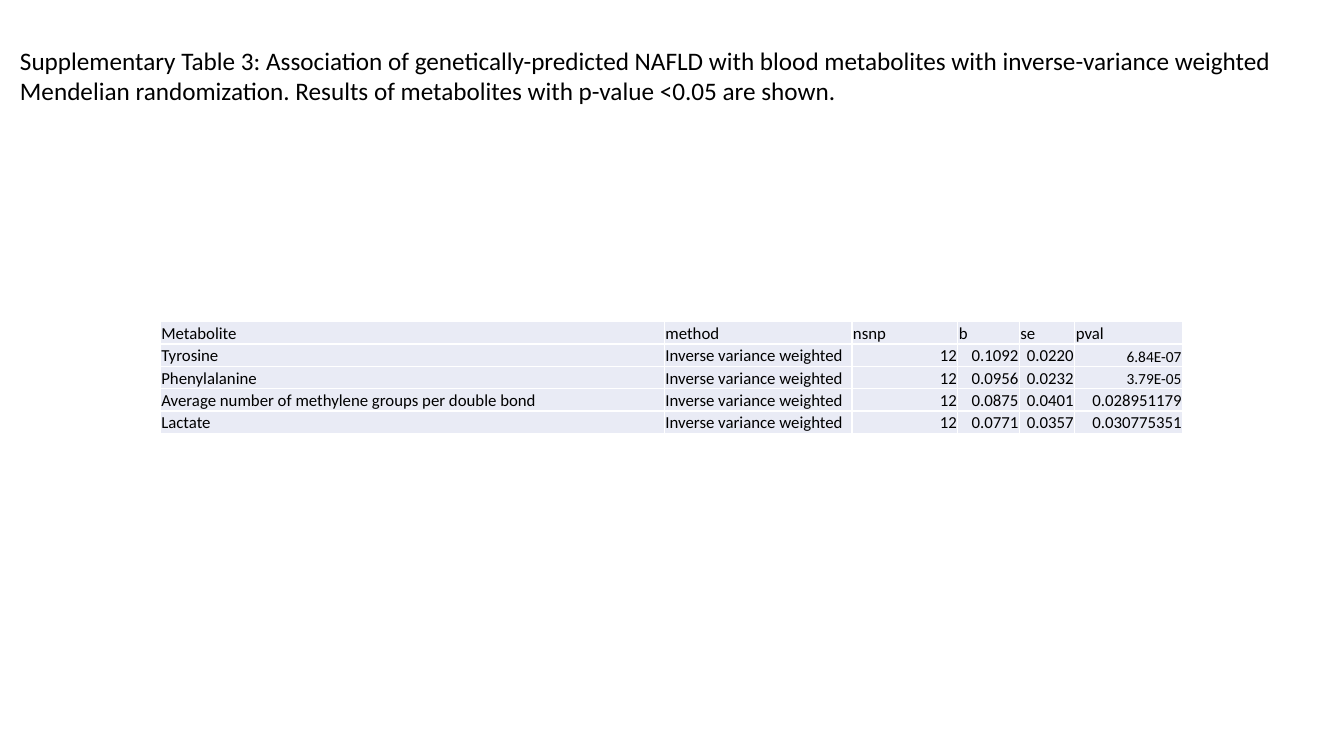
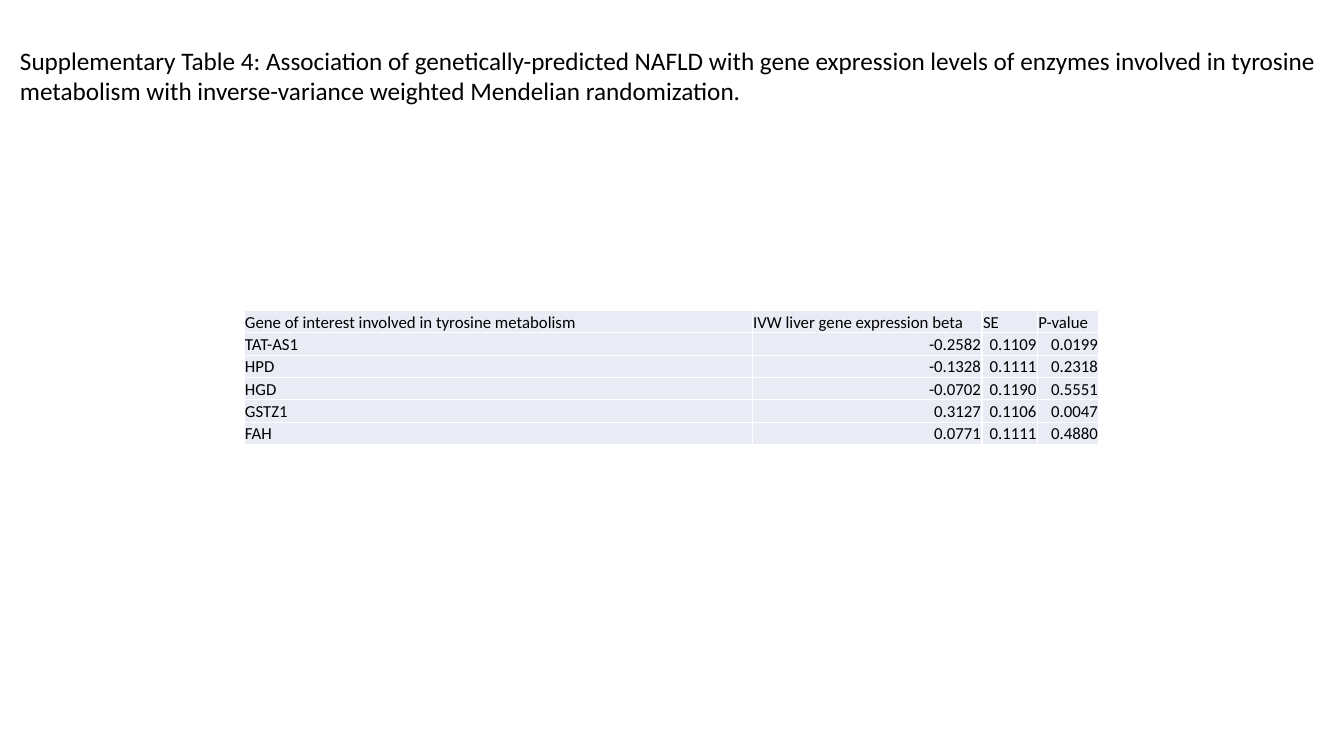
from lxml import etree
from pptx import Presentation
from pptx import util as u
from pptx.dml import color
from pptx.enum import text
from pptx.oxml import ns

COLORS = {"text": "000000", "cell": "E9EBF5", "border": "FFFFFF"}
FONT = "Calibri"
CELL_FORMAT = {
    "margin_left": u.Inches(0.01),
    "margin_right": u.Inches(0.01),
    "margin_top": u.Inches(0.01),
    "margin_bottom": u.Inches(0),
    "vertical_anchor": text.MSO_ANCHOR.BOTTOM,
}
TABLES = [
    {
        "title": "Supplementary Table 3: Association of genetically-predicted NAFLD with blood "
        "metabolites with inverse-variance weighted Mendelian randomization. Results of "
        "metabolites with p-value <0.05 are shown.",
        "left": 1.59, "top": 3.19, "height": 1.11,
        "widths": [5, 1.86, 1.05, 0.61, 0.55, 1.07],
        "label_columns": 2,
        "rows": [
            ["Metabolite", "method", "nsnp", "b", "se", "pval"],
            ["Tyrosine", "Inverse variance weighted", "12", "0.1092", "0.0220", "6.84E-07"],
            ["Phenylalanine", "Inverse variance weighted", "12", "0.0956", "0.0232", "3.79E-05"],
            ["Average number of methylene groups per double bond", "Inverse variance weighted",
             "12", "0.0875", "0.0401", "0.028951179"],
            ["Lactate", "Inverse variance weighted", "12", "0.0771", "0.0357", "0.030775351"],
        ],
    },
    {
        "title": "Supplementary Table 4: Association of genetically-predicted NAFLD with gene "
        "expression levels of enzymes involved in tyrosine metabolism with inverse-variance "
        "weighted Mendelian randomization.",
        "left": 2.42, "top": 3.08, "height": 1.33,
        "widths": [5.04, 2.28, 0.55, 0.61],
        "label_columns": 1,
        "rows": [
            ["Gene of interest involved in tyrosine metabolism", "IVW liver gene expression beta",
             "SE", "P-value"],
            ["TAT-AS1", "-0.2582", "0.1109", "0.0199"],
            ["HPD", "-0.1328", "0.1111", "0.2318"],
            ["HGD", "-0.0702", "0.1190", "0.5551"],
            ["GSTZ1", "0.3127", "0.1106", "0.0047"],
            ["FAH", "0.0771", "0.1111", "0.4880"],
        ],
    },
]


def write_text(paragraph, content, size):
    run = paragraph.add_run()
    run.text = content
    run.font.name = FONT
    run.font.size = u.Pt(size)
    run.font.color.rgb = color.RGBColor.from_string(COLORS["text"])


def add_borders(cell):
    properties = cell._tc.get_or_add_tcPr()
    for side in ("lnL", "lnR", "lnT", "lnB"):
        line = etree.SubElement(properties, ns.qn(f"a:{side}"), w=str(u.Pt(1)))
        fill = etree.SubElement(line, ns.qn("a:solidFill"))
        etree.SubElement(fill, ns.qn("a:srgbClr"), val=COLORS["border"])


presentation = Presentation()
presentation.slide_width = u.Inches(13.33)
presentation.slide_height = u.Inches(7.5)

for content in TABLES:
    slide = presentation.slides.add_slide(presentation.slide_layouts[6])

    title = slide.shapes.add_textbox(
        u.Inches(0.1), u.Inches(0.4), u.Inches(13.24), u.Inches(0.71)
    ).text_frame
    title.word_wrap = True
    title.auto_size = text.MSO_AUTO_SIZE.SHAPE_TO_FIT_TEXT
    write_text(title.paragraphs[0], content["title"], 18)

    rows, widths = content["rows"], content["widths"]
    table = slide.shapes.add_table(
        len(rows), len(widths), u.Inches(content["left"]), u.Inches(content["top"]),
        u.Inches(sum(widths)), u.Inches(content["height"]),
    ).table
    table.first_row = False
    table.horz_banding = False
    for column, width in zip(table.columns, widths):
        column.width = u.Inches(width)

    for row_index, row in enumerate(rows):
        for column_index, value in enumerate(row):
            cell = table.cell(row_index, column_index)
            for name, setting in CELL_FORMAT.items():
                setattr(cell, name, setting)
            add_borders(cell)
            cell.fill.solid()
            cell.fill.fore_color.rgb = color.RGBColor.from_string(COLORS["cell"])
            paragraph = cell.text_frame.paragraphs[0]
            if row_index > 0 and column_index >= content["label_columns"]:
                paragraph.alignment = text.PP_ALIGN.RIGHT
            write_text(paragraph, value, 11 if "E-" in value else 12)

presentation.save("out.pptx")
